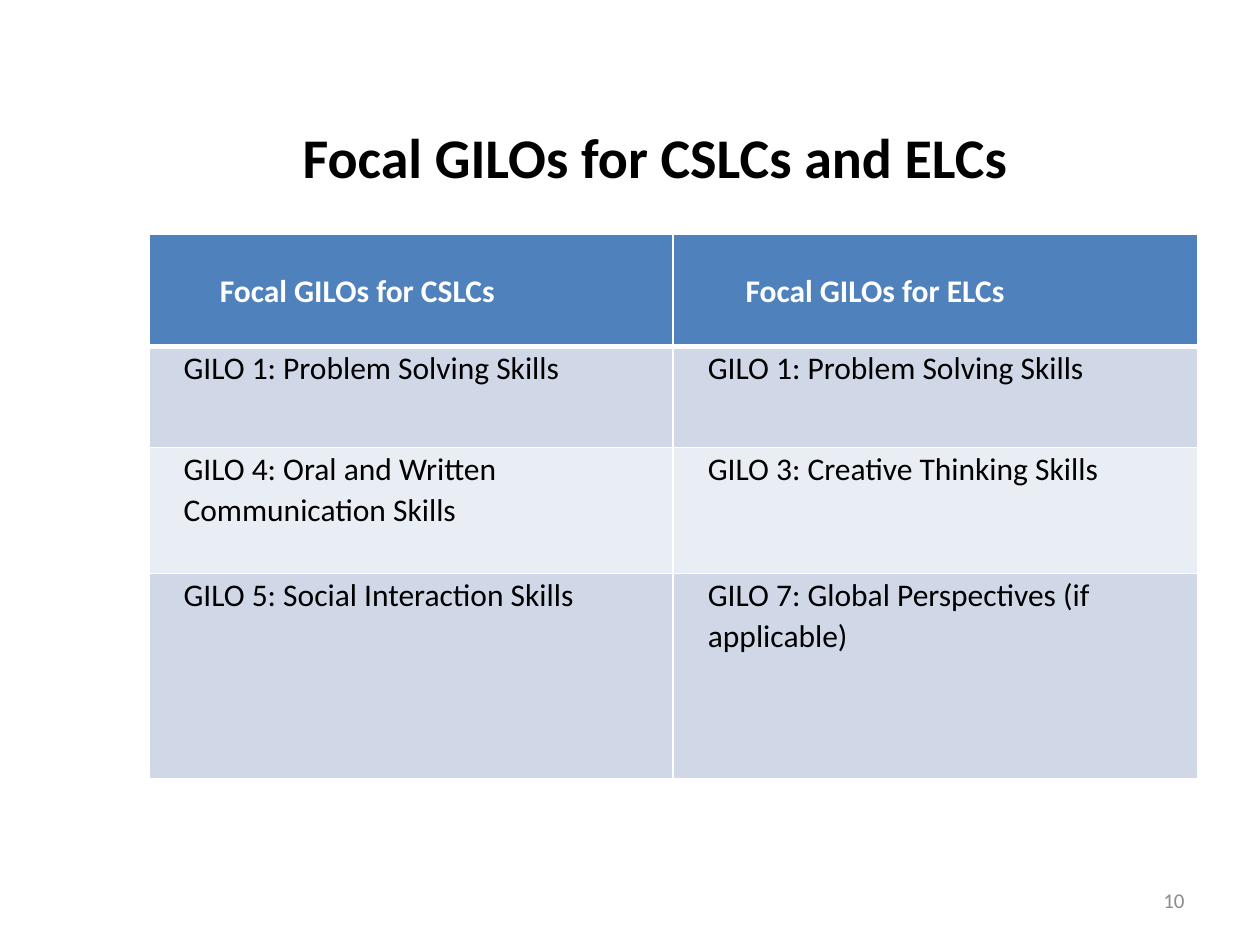
"""Build the slide that lists the focal GILOs for CSLCs and ELCs in a table."""
import pptx
import pptx.dml.color
import pptx.enum.text
import pptx.oxml
import pptx.oxml.ns
import pptx.util

Cm = pptx.util.Cm
Pt = pptx.util.Pt
ALIGN = pptx.enum.text.PP_ALIGN
MIDDLE = pptx.enum.text.MSO_ANCHOR.MIDDLE
TOP = pptx.enum.text.MSO_ANCHOR.TOP

COLOURS = {
    "title": "000000",
    "number": "8C8C8C",
    "header": "4F81BD",
    "header_text": "FFFFFF",
    "body_text": "000000",
    "odd_row": "D0D8E8",
    "even_row": "E9EDF4",
    "border": "FFFFFF",
}


def write(frame, text, colour, frame_format, paragraph_format, font_format):
    """Put one formatted paragraph into a text frame and return it."""
    para = frame.paragraphs[0]
    span = para.add_run()
    span.text = text
    formats = ((frame, frame_format), (para, paragraph_format), (span.font, font_format))
    for target, values in formats:
        for name, value in values.items():
            setattr(target, name, value)
    span.font.name = "Calibri"
    span.font.color.rgb = pptx.dml.color.RGBColor.from_string(COLOURS[colour])
    return para


def add_border(cell, side, width):
    """Draw one side of a cell border."""
    cell._tc.get_or_add_tcPr().append(pptx.oxml.parse_xml(
        f'<a:ln{side} {pptx.oxml.ns.nsdecls("a")} w="{Pt(width)}"><a:solidFill>'
        f'<a:srgbClr val="{COLOURS["border"]}"/></a:solidFill></a:ln{side}>'
    ))


deck = pptx.Presentation()
deck.slide_width = Cm(25.4)
deck.slide_height = Cm(19.05)
page = deck.slides.add_slide(deck.slide_layouts[5])

title = page.shapes.title
title_place = {"left": Cm(1.78), "top": Cm(1.55), "width": Cm(22.86), "height": Cm(3.18)}
for name, value in title_place.items():
    setattr(title, name, value)
write(title.text_frame, "Focal GILOs for CSLCs and ELCs", "title",
      {"vertical_anchor": MIDDLE, "word_wrap": True},
      {"alignment": ALIGN.CENTER}, {"size": Pt(32), "bold": True})

number_box = page.shapes.add_textbox(Cm(18.2), Cm(17.65), Cm(5.93), Cm(1.01))
write(number_box.text_frame, "10", "number",
      {"vertical_anchor": MIDDLE, "word_wrap": True},
      {"alignment": ALIGN.RIGHT}, {"size": Pt(12)})

rows = [
    ("Focal GILOs for CSLCs", "Focal GILOs for ELCs"),
    ("GILO 1: Problem Solving Skills", "GILO 1: Problem Solving Skills"),
    ("GILO 4: Oral and Written Communication Skills", "GILO 3: Creative Thinking Skills"),
    ("GILO 5: Social Interaction Skills", "GILO 7: Global Perspectives (if applicable)"),
]
row_heights = [2.27, 2.03, 2.54, 4.14]
column_width = 10.57
header_indents = [1.24, 1.27]
body_indent = 0.51

table = page.shapes.add_table(
    len(rows), 2, Cm(3), Cm(4.72), Cm(2 * column_width), Cm(sum(row_heights))
).table
for column in table.columns:
    column.width = Cm(column_width)

for row_index, (texts, height) in enumerate(zip(rows, row_heights)):
    table.rows[row_index].height = Cm(height)
    is_header = row_index == 0
    fill = "header" if is_header else "odd_row" if row_index % 2 else "even_row"
    borders = {"L": 1, "R": 1, "T": 3 if row_index == 1 else 1, "B": 3 if is_header else 1}
    cell_format = {
        "margin_left": Cm(0.19), "margin_right": Cm(0.19),
        "margin_top": 0, "margin_bottom": 0,
        "vertical_anchor": MIDDLE if is_header else TOP,
    }
    for column_index, text in enumerate(texts):
        cell = table.cell(row_index, column_index)
        for name, value in cell_format.items():
            setattr(cell, name, value)
        for side, width in borders.items():
            add_border(cell, side, width)
        cell.fill.solid()
        cell.fill.fore_color.rgb = pptx.dml.color.RGBColor.from_string(COLOURS[fill])
        para = write(cell.text_frame, text, "header_text" if is_header else "body_text",
                     {}, {"alignment": ALIGN.LEFT, "line_spacing": 1.07},
                     {"size": Pt(18), "bold": is_header})
        indent = header_indents[column_index] if is_header else body_indent
        para._p.get_or_add_pPr().set("marL", str(Cm(indent)))

deck.save("out.pptx")
